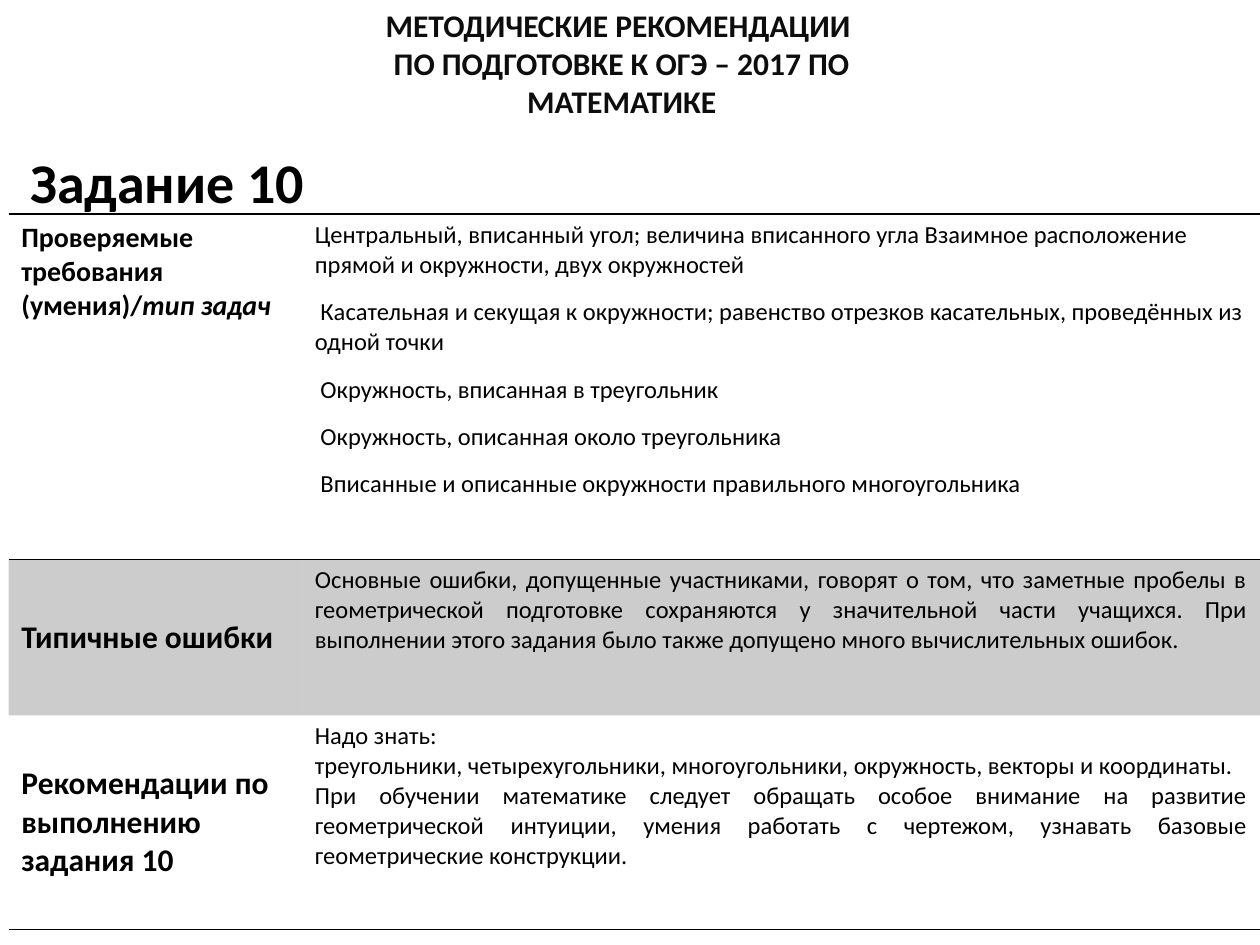
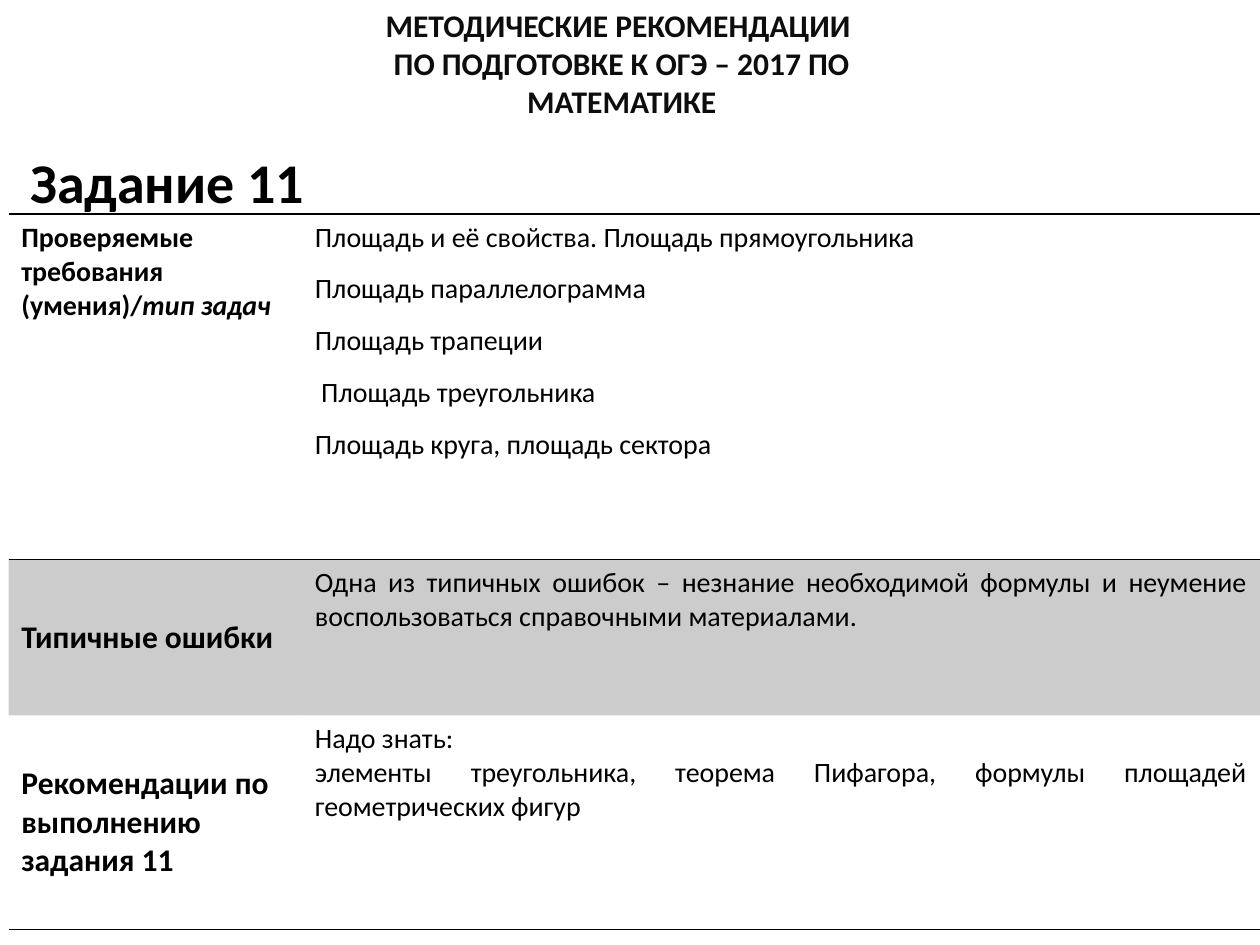
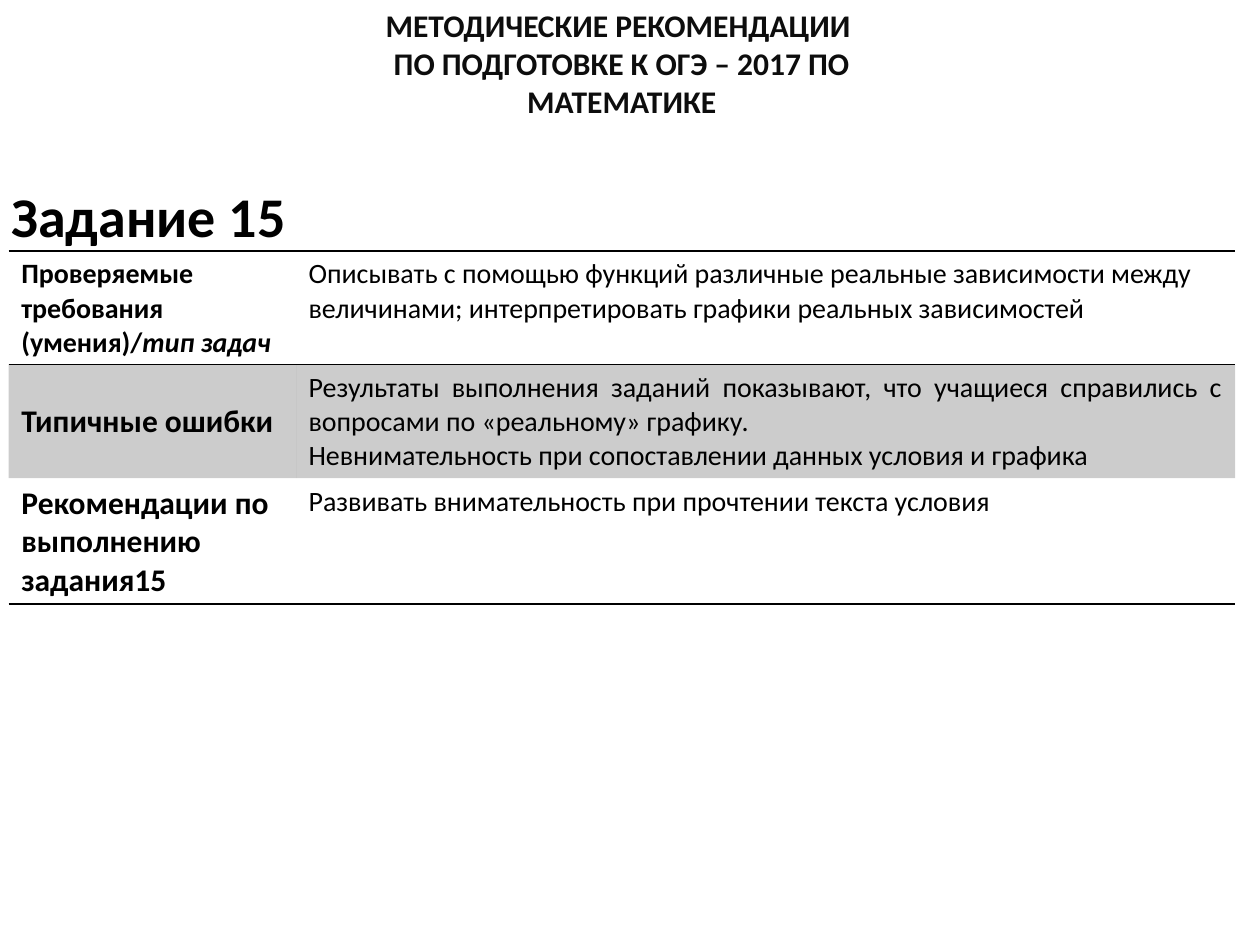
from lxml.etree import SubElement
from pptx import Presentation
from pptx.dml.color import RGBColor
from pptx.enum.text import MSO_ANCHOR, MSO_AUTO_SIZE, PP_ALIGN
from pptx.oxml.ns import qn
from pptx.util import Pt

HEX = {"ink": "000000", "head": "0D0D0D"}
FONT = "Calibri"
PLAIN = "{2D5ABB26-0587-4C30-8999-92F81FD0307C}"
HEAD = ["МЕТОДИЧЕСКИЕ РЕКОМЕНДАЦИИ ", "ПО ПОДГОТОВКЕ К ОГЭ – 2017 ПО МАТЕМАТИКЕ"]
TALL = {"task": (10, 80.6), "grid": (5, 122.4),
        "cols": (167.8, 547.2), "rows": (197.2, 89.2, 122.4)}
SHORT = {"task": (-0.7, 100), "grid": (5, 143.4),
         "cols": (164.2, 536.6), "rows": (64.6, 65, 72)}
TASKS = [
    {"name": "Задание 10", "form": TALL, "size": 14, "gap": 10,
     "advice": "Рекомендации по выполнению задания 10",
     "skills": [
         "Центральный, вписанный угол; величина вписанного угла Взаимное расположение прямой и окружности, двух окружностей",
         " Касательная и секущая к окружности; равенство отрезков касательных, проведённых из одной точки",
         " Окружность, вписанная в треугольник",
         " Окружность, описанная около треугольника",
         " Вписанные и описанные окружности правильного многоугольника"],
     "errors": [
         "Основные ошибки, допущенные участниками, говорят о том, что заметные пробелы в геометрической подготовке сохраняются у значительной части учащихся. При выполнении этого задания было также допущено много вычислительных ошибок."],
     "tips": [
         "Надо знать:",
         "треугольники, четырехугольники, многоугольники, окружность, векторы и координаты.",
         "При обучении математике следует обращать особое внимание на развитие геометрической интуиции, умения работать с чертежом, узнавать базовые геометрические конструкции."]},
    {"name": "Задание 11", "form": TALL, "size": 16, "gap": 10,
     "advice": "Рекомендации по выполнению задания 11",
     "skills": [
         "Площадь и её свойства. Площадь прямоугольника",
         "Площадь параллелограмма",
         "Площадь трапеции",
         " Площадь треугольника",
         "Площадь круга, площадь сектора"],
     "errors": [
         "Одна из типичных ошибок – незнание необходимой формулы и неумение воспользоваться справочными материалами."],
     "tips": [
         "Надо знать:",
         "элементы треугольника, теорема Пифагора, формулы площадей геометрических фигур"]},
    {"name": "Задание 15", "form": SHORT, "size": 16, "gap": 0,
     "advice": "Рекомендации по выполнению задания15",
     "skills": [
         "Описывать с помощью функций различные реальные зависимости между величинами; интерпретировать графики реальных зависимостей"],
     "errors": [
         "Результаты выполнения заданий показывают, что учащиеся справились с вопросами по «реальному» графику.",
         "Невнимательность при сопоставлении данных условия и графика"],
     "tips": ["Развивать внимательность при прочтении текста условия"]},
]


class Deck:
    """Holds the shared style and the current slide."""

    def __init__(self):
        self.prs = Presentation()
        self.prs.slide_width, self.prs.slide_height = Pt(720), Pt(540)
        self.slide = None

    def page(self):
        self.slide = self.prs.slides.add_slide(self.prs.slide_layouts[5])

    def run(self, para, text, size, bold=False, slant=False, tone="ink"):
        run = para.add_run()
        run.text = text
        font = run.font
        font.name, font.size = FONT, Pt(size)
        font.bold, font.italic = bold, slant
        font.color.rgb = RGBColor.from_string(HEX[tone])

    def fill(self, frame, lines, size, align=PP_ALIGN.LEFT, gap=0, **look):
        for i, line in enumerate(lines):
            para = frame.add_paragraph() if i else frame.paragraphs[0]
            para.alignment, para.space_after = align, Pt(gap)
            self.run(para, line, size, **look)

    def title(self, text, spot):
        box = self.slide.shapes.title
        box.left, box.top = map(Pt, spot)
        box.width, box.height = Pt(172.8), Pt(46)
        frame = box.text_frame
        frame.word_wrap = False
        frame.auto_size = MSO_AUTO_SIZE.SHAPE_TO_FIT_TEXT
        frame.vertical_anchor = MSO_ANCHOR.TOP
        self.fill(frame, [text], 32, bold=True)

    def header(self):
        box = self.slide.shapes.add_textbox(Pt(162.8), Pt(0), Pt(385), Pt(72.8))
        frame = box.text_frame
        frame.word_wrap = True
        frame.auto_size = MSO_AUTO_SIZE.SHAPE_TO_FIT_TEXT
        self.fill(frame, HEAD, 18, PP_ALIGN.CENTER, bold=True, tone="head")

    def edge(self, cell, side):
        line = SubElement(cell._tc.get_or_add_tcPr(), qn("a:" + side), w=str(Pt(1)))
        paint = SubElement(line, qn("a:solidFill"))
        SubElement(paint, qn("a:srgbClr"), val=HEX["ink"])

    def shade(self, cell):
        cell.fill.solid()
        cell.fill.fore_color.rgb = RGBColor.from_string(HEX["ink"])
        tint = cell._tc.tcPr.find(".//" + qn("a:srgbClr"))
        SubElement(tint, qn("a:alpha"), val="20000")

    def grid(self, task):
        form, size = task["form"], task["size"]
        cols, rows = form["cols"], form["rows"]
        table = self.slide.shapes.add_table(
            len(rows), len(cols), *map(Pt, form["grid"]),
            Pt(sum(cols)), Pt(sum(rows))).table
        table.first_row = table.horz_banding = False
        table._tbl.tblPr.find(qn("a:tableStyleId")).text = PLAIN
        for col, width in zip(table.columns, cols):
            col.width = Pt(width)
        for row, height, sides in zip(table.rows, rows, (("lnT", "lnB"), (), ("lnB",))):
            row.height = Pt(height)
            for cell in row.cells:
                for side in sides:
                    self.edge(cell, side)
                if sides:
                    cell.fill.background()
                else:
                    self.shade(cell)
        need = table.cell(0, 0).text_frame
        self.fill(need, ["Проверяемые требования (умения)/"], 16, bold=True)
        self.run(need.paragraphs[0], "тип задач", 16, bold=True, slant=True)
        self.fill(table.cell(0, 1).text_frame, task["skills"], size, gap=task["gap"])
        pairs = (("Типичные ошибки", task["errors"]), (task["advice"], task["tips"]))
        for i, (label, lines) in enumerate(pairs, 1):
            cell = table.cell(i, 0)
            cell.vertical_anchor = MSO_ANCHOR.MIDDLE
            self.fill(cell.text_frame, [label], 18, bold=True)
            self.fill(table.cell(i, 1).text_frame, lines, size, PP_ALIGN.JUSTIFY)


def main():
    deck = Deck()
    for task in TASKS:
        deck.page()
        deck.title(task["name"], task["form"]["task"])
        deck.grid(task)
        deck.header()
    deck.prs.save("out.pptx")


if __name__ == "__main__":
    main()
